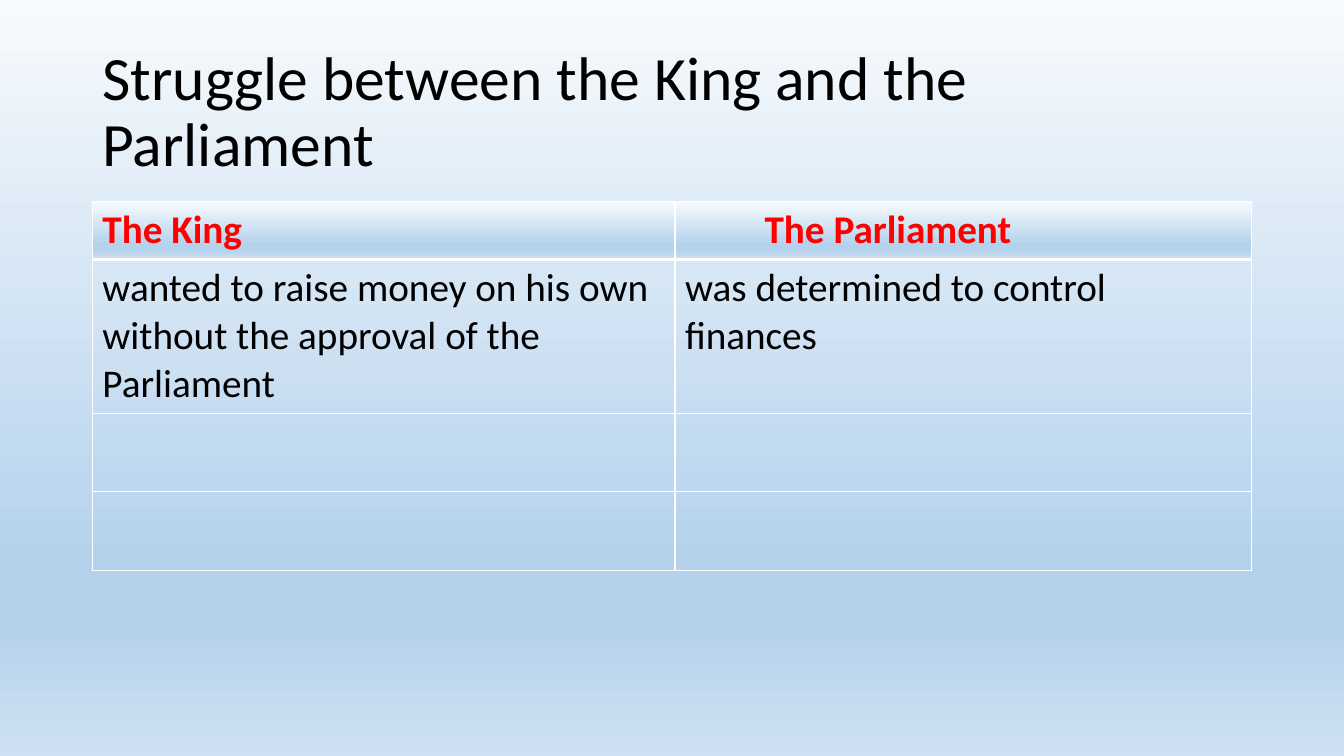
import pptx
import pptx.dml.color
import pptx.enum.text
import pptx.oxml
import pptx.oxml.ns
import pptx.util
from lxml import etree

Pt = pptx.util.Pt
qn = pptx.oxml.ns.qn
ALIGN = pptx.enum.text.PP_ALIGN

SKY = [(0, "F7FAFD"), (74, "B5D2EC"), (83, "B5D2EC"), (100, "CEE1F2")]
COLUMN_WIDTHS = [416.2, 411.8]
ROW_HEIGHTS = [41.4, 109.6, 56, 56]
HEADINGS = ["The King", "The Parliament"]
POSITIONS = [
    "wanted to raise money on his own without the approval of the Parliament",
    "was determined to control finances",
]


def color(hex_value):
    return pptx.dml.color.RGBColor.from_string(hex_value)


def write(frame, text, size=28, hue="000000", bold=False, align=ALIGN.LEFT, spacing=1.0):
    paragraph = frame.paragraphs[0]
    paragraph.alignment = align
    paragraph.line_spacing = spacing
    run = paragraph.add_run()
    run.text = text
    run.font.name = "Calibri"
    run.font.size = Pt(size)
    run.font.bold = bold
    run.font.color.rgb = color(hue)


def paint_sky(fill, owner):
    """Vertical four-stop gradient; owner is the XML element holding the fill."""
    fill.gradient()
    fill.gradient_angle = 270
    stops = next(owner.iter(qn("a:gsLst")))
    for stop in list(stops):
        stops.remove(stop)
    for percent, hue in SKY:
        stop = etree.SubElement(stops, qn("a:gs"), pos=str(percent * 1000))
        etree.SubElement(stop, qn("a:srgbClr"), val=hue)


def border(cell, top=1, bottom=1):
    """White lines, placed before the fill as the schema requires."""
    properties = cell._tc.get_or_add_tcPr()
    widths = [("L", 1), ("R", 1), ("T", top), ("B", bottom)]
    for index, (side, width) in enumerate(widths):
        line = pptx.oxml.parse_xml(
            f'<a:ln{side} {pptx.oxml.ns.nsdecls("a")} w="{Pt(width)}">'
            '<a:solidFill><a:srgbClr val="FFFFFF"/></a:solidFill>'
            f'</a:ln{side}>')
        properties.insert(index, line)


def add_title(slide, text):
    title = slide.shapes.title
    title.left, title.top, title.width, title.height = Pt(66), Pt(28.8), Pt(828), Pt(104.4)
    title.text_frame.word_wrap = True
    title.text_frame.vertical_anchor = pptx.enum.text.MSO_ANCHOR.MIDDLE
    write(title.text_frame, text, size=44, spacing=0.9)


def add_comparison(slide):
    comparison = slide.shapes.add_table(
        len(ROW_HEIGHTS), len(COLUMN_WIDTHS), Pt(66), Pt(144),
        Pt(sum(COLUMN_WIDTHS)), Pt(sum(ROW_HEIGHTS))).table
    comparison.horz_banding = False
    for column, width in zip(comparison.columns, COLUMN_WIDTHS):
        column.width = Pt(width)
    for row, height in zip(comparison.rows, ROW_HEIGHTS):
        row.height = Pt(height)

    # Fills and borders
    for row_index, row in enumerate(comparison.rows):
        for cell in row.cells:
            if row_index == 0:
                paint_sky(cell.fill, cell._tc)
            else:
                cell.fill.background()
            border(cell, top=3 if row_index == 1 else 1, bottom=3 if row_index == 0 else 1)

    # Wording
    for column_index, (heading, position) in enumerate(zip(HEADINGS, POSITIONS)):
        write(comparison.cell(0, column_index).text_frame, heading, hue="FF0000", bold=True,
              align=ALIGN.JUSTIFY if column_index else ALIGN.LEFT)
        write(comparison.cell(1, column_index).text_frame, position)
    comparison.cell(0, 1).margin_left = Pt(64)
    comparison.cell(1, 1).margin_right = Pt(36)


def main():
    deck = pptx.Presentation()
    deck.slide_width, deck.slide_height = Pt(960), Pt(540)
    slide = deck.slides.add_slide(deck.slide_layouts[5])
    paint_sky(slide.background.fill, slide._element)
    add_title(slide, "Struggle between the King and the Parliament")
    add_comparison(slide)
    deck.save("out.pptx")


if __name__ == "__main__":
    main()
